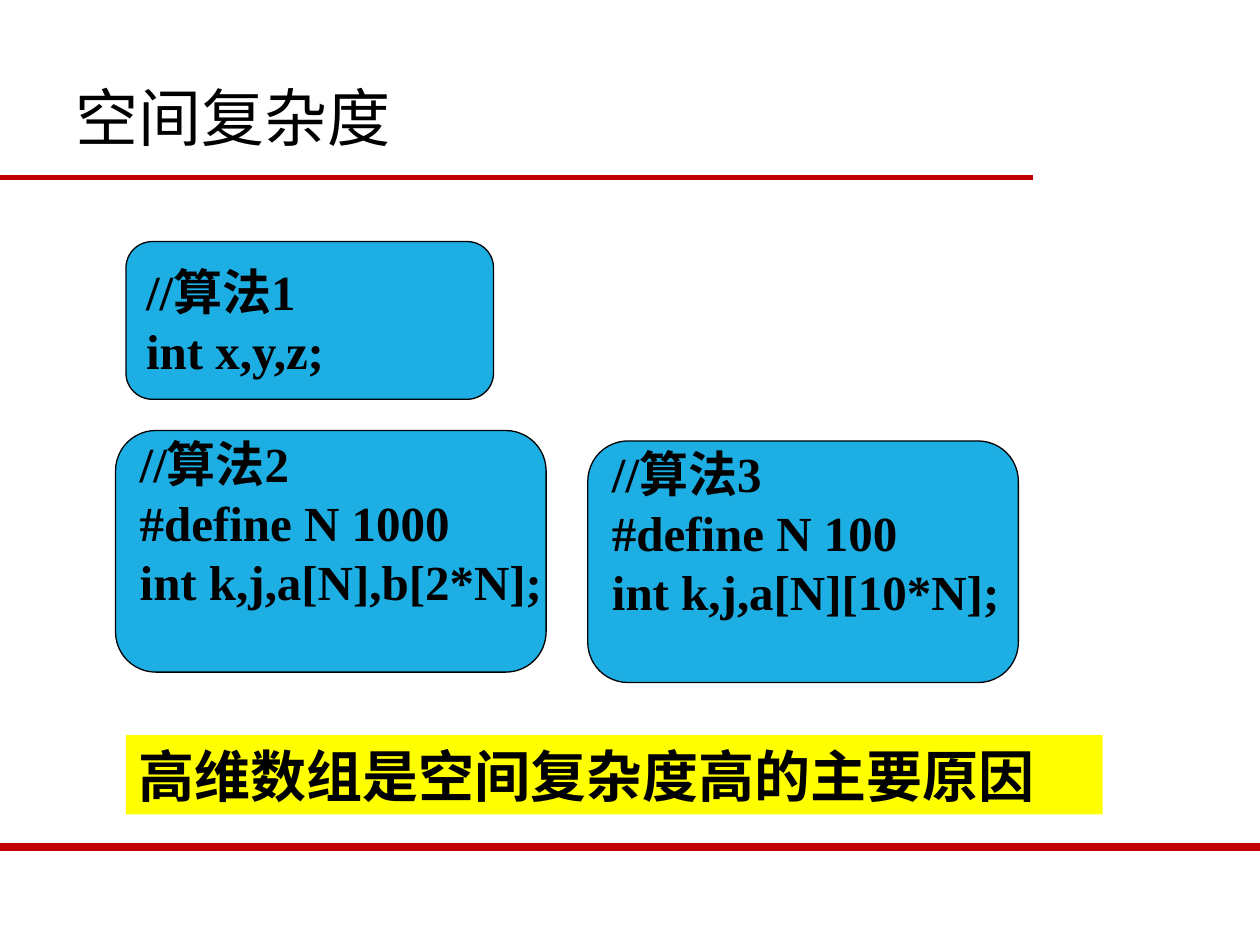
import pptx
import pptx.util
import pptx.dml.color
import pptx.enum.shapes
import pptx.enum.text
import lxml.etree
from dataclasses import dataclass
from pptx.util import Cm


@dataclass(frozen=True)
class Theme:
    black: str = "000000"
    rule: str = "C00000"
    code_fill: str = "1DAFE3"
    highlight: str = "FFFF00"
    cjk_font: str = "Noto Sans CJK SC"
    code_font: str = "Times New Roman"
    note_font: str = "Calibri"
    title_size: int = 36
    code_size: int = 28
    note_size: int = 32


theme = Theme()
rgb = pptx.dml.color.RGBColor.from_string
drawing = "{http://schemas.openxmlformats.org/drawingml/2006/main}"


def add_run(paragraph, text, font_name, size, bold):
    paragraph.alignment = pptx.enum.text.PP_ALIGN.LEFT
    run = paragraph.add_run()
    run.text = text
    run.font.size = pptx.util.Pt(size)
    run.font.bold = bold
    run.font.color.rgb = rgb(theme.black)
    run.font.name = font_name
    latin = run.font._element.find(drawing + "latin")
    east_asian = lxml.etree.Element(drawing + "ea", typeface=theme.cjk_font)
    latin.addnext(east_asian)


def add_box(kind, left, top, width, height, fill):
    shape = slide.shapes.add_shape(kind, Cm(left), Cm(top), Cm(width), Cm(height))
    shape.shadow.inherit = False
    shape.fill.solid()
    shape.fill.fore_color.rgb = rgb(fill)
    return shape


presentation = pptx.Presentation()
presentation.slide_width = Cm(25.4)
presentation.slide_height = Cm(19.05)
slide = presentation.slides.add_slide(presentation.slide_layouts[5])

for top, length, weight in [(3.58, 20.83, 3), (17.07, 25.4, 4.5)]:
    rule = slide.shapes.add_connector(
        pptx.enum.shapes.MSO_CONNECTOR.STRAIGHT, Cm(0), Cm(top), Cm(length), Cm(top)
    )
    rule.line.color.rgb = rgb(theme.rule)
    rule.line.width = pptx.util.Pt(weight)
    lxml.etree.SubElement(rule._element.spPr, drawing + "effectLst")

title = slide.shapes.title
title.left, title.top, title.width, title.height = Cm(1.27), Cm(0.76), Cm(22.86), Cm(3.18)
title.text_frame.vertical_anchor = pptx.enum.text.MSO_ANCHOR.MIDDLE
add_run(title.text_frame.paragraphs[0], "空间复杂度", theme.cjk_font, theme.title_size, False)

algorithms = [
    (2.54, 4.87, 7.41, 3.18, 0.13, ["//算法1", "int x,y,z;"]),
    (2.33, 8.68, 8.68, 4.87, 1.32, ["//算法2", "#define N 1000", "int k,j,a[N],b[2*N];"]),
    (11.85, 8.89, 8.68, 4.87, 1.32, ["//算法3", "#define N 100", "int k,j,a[N][10*N];"]),
]
for left, top, width, height, bottom_margin, code_lines in algorithms:
    box = add_box(
        pptx.enum.shapes.MSO_SHAPE.FLOWCHART_ALTERNATE_PROCESS,
        left, top, width, height, theme.code_fill,
    )
    box.line.color.rgb = rgb(theme.black)
    box.line.width = pptx.util.Pt(0.75)
    frame = box.text_frame
    frame.word_wrap = False
    frame.vertical_anchor = pptx.enum.text.MSO_ANCHOR.MIDDLE
    frame.margin_bottom = Cm(bottom_margin)
    for index, code in enumerate(code_lines):
        paragraph = frame.add_paragraph() if index else frame.paragraphs[0]
        add_run(paragraph, code, theme.code_font, theme.code_size, True)

conclusion = add_box(
    pptx.enum.shapes.MSO_SHAPE.RECTANGLE, 2.54, 14.82, 19.69, 1.6, theme.highlight
)
conclusion.line.fill.background()
conclusion.text_frame.word_wrap = True
conclusion.text_frame.vertical_anchor = pptx.enum.text.MSO_ANCHOR.TOP
add_run(
    conclusion.text_frame.paragraphs[0],
    "高维数组是空间复杂度高的主要原因", theme.note_font, theme.note_size, True,
)

presentation.save("out.pptx")
